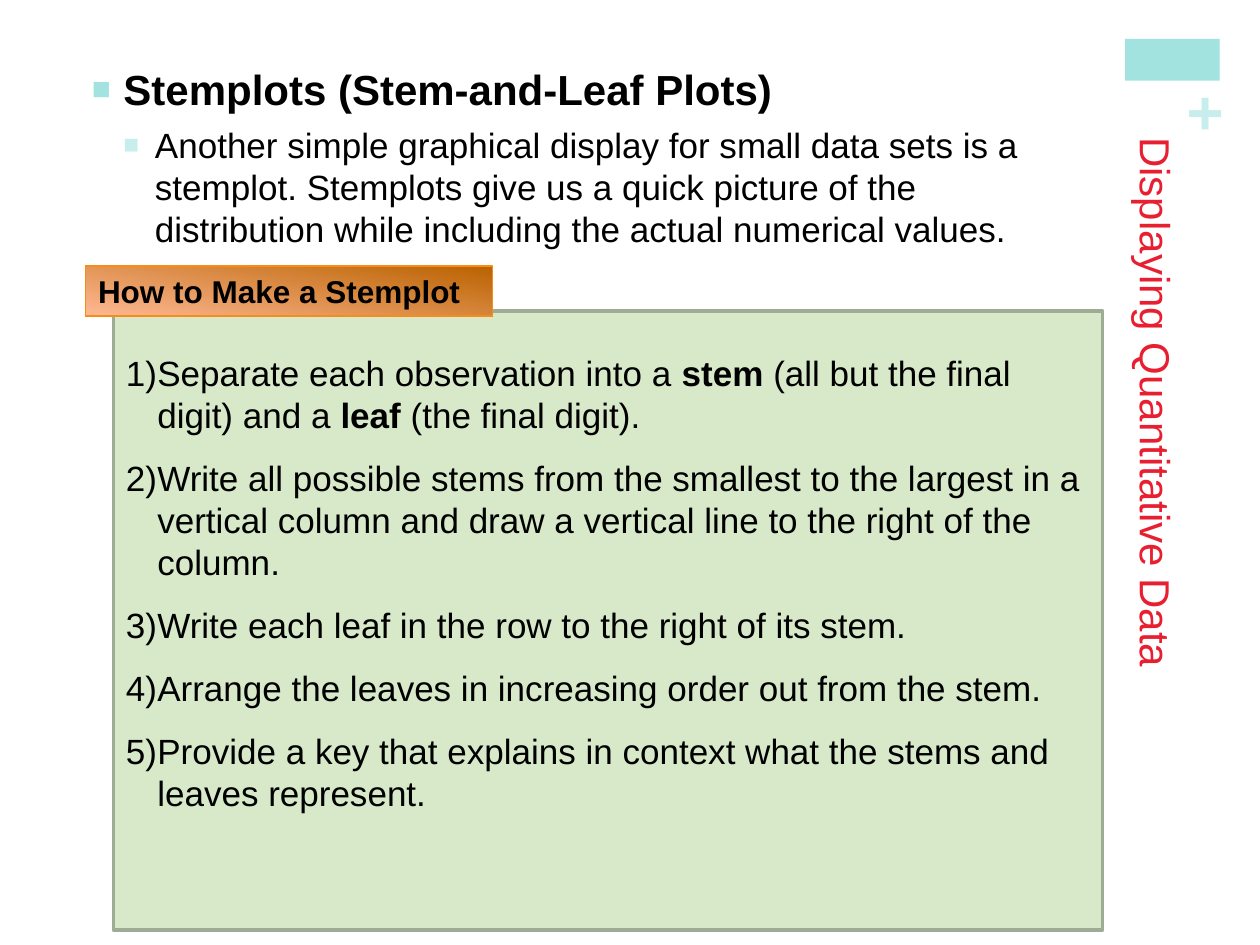
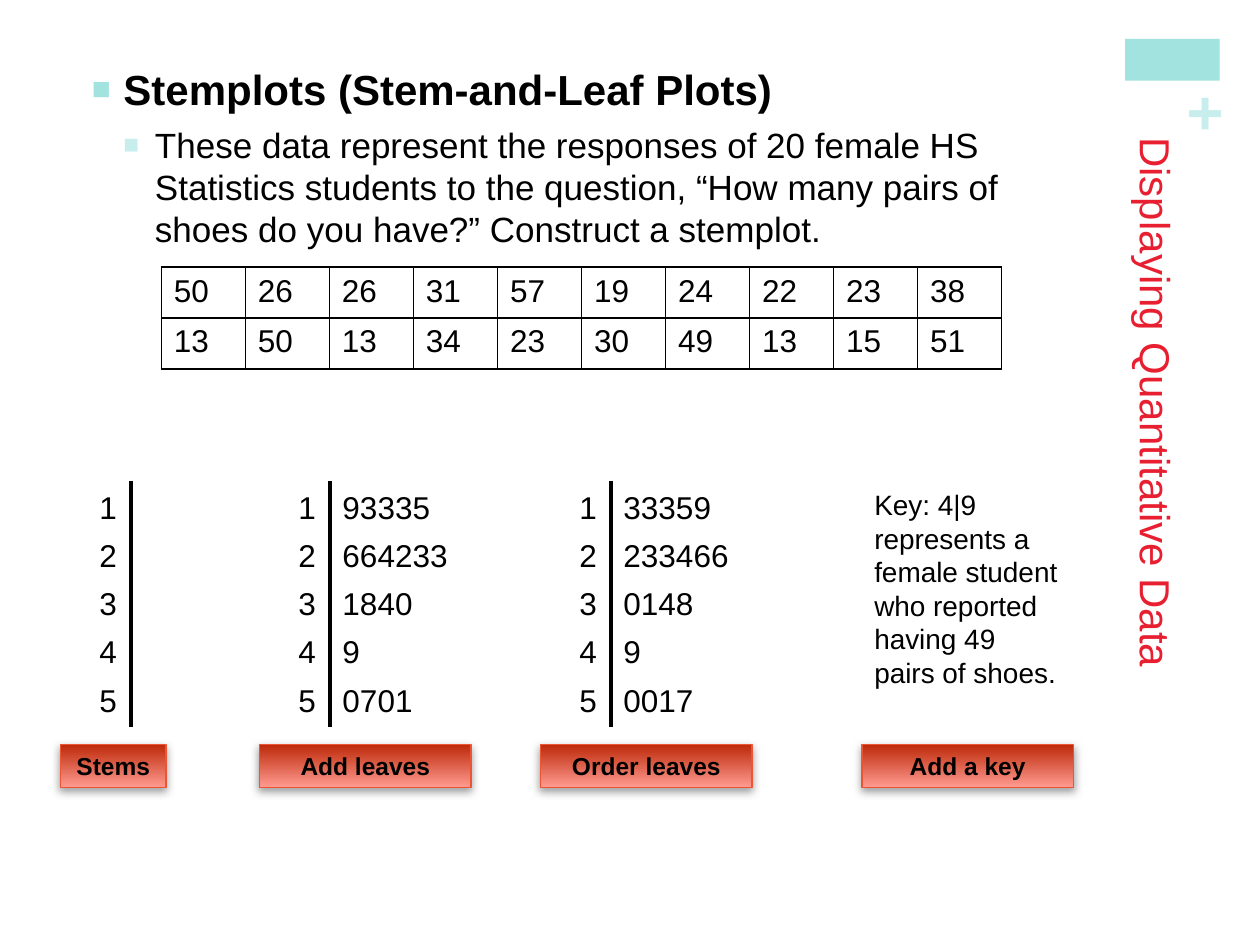
from lxml.etree import SubElement
from pptx import Presentation
from pptx.dml.color import RGBColor
from pptx.enum.shapes import MSO_CONNECTOR, MSO_SHAPE
from pptx.enum.text import MSO_ANCHOR, MSO_AUTO_SIZE, PP_ALIGN
from pptx.oxml.ns import qn
from pptx.util import Inches, Pt

FONT = "Arial"
BLACK = "000000"
TEAL = "A2E3DF"
PALE_TEAL = "C7EEEC"
RED = "E81F30"
ORANGE_FADE = ("BA6200", "FFB993")
RED_FADE = ("BD2909", "FF9A90")

CHAPTER = "Displaying Quantitative Data"
TOPIC = "Stemplots (Stem-and-Leaf Plots)"
INTRO = (
    "Another simple graphical display for small data sets is a stemplot. Stemplots give us "
    "a quick picture of the distribution while including the actual numerical values."
)
QUESTION = (
    "These data represent the responses of 20 female HS Statistics students to the question, "
    "“How many pairs of shoes do you have?” Construct a stemplot."
)
STEPS = [
    "Separate each observation into a *stem* (all but the final digit) and a *leaf* (the final digit).",
    "Write all possible stems from the smallest to the largest in a vertical column "
    "and draw a vertical line to the right of the column.",
    "Write each leaf in the row to the right of its stem.",
    "Arrange the leaves in increasing order out from the stem.",
    "Provide a key that explains in context what the stems and leaves represent.",
]
SHOE_PAIRS = [
    [50, 26, 26, 31, 57, 19, 24, 22, 23, 38],
    [13, 50, 13, 34, 23, 30, 49, 13, 15, 51],
]
ADDED_LEAVES = ["93335", "664233", "1840", "9", "0701"]
ORDERED_LEAVES = ["33359", "233466", "0148", "9", "0017"]
KEY = "Key: 4|9 represents a female student who reported having 49 pairs of shoes."

PLOT_TOP = 3.82
PLOT_HEIGHT = 1.95
LABEL_TOP = 5.91


def rgb(color):
    return RGBColor.from_string(color)


def place(element, left, top, width, height):
    element.left, element.top = Inches(left), Inches(top)
    element.width, element.height = Inches(width), Inches(height)


def format_run(run, size, color, bold):
    run.font.name = FONT
    run.font.size = Pt(size)
    run.font.color.rgb = rgb(color)
    run.font.bold = bold


def write(frame, lines, size, color=BLACK, bold=False, after=0, align=PP_ALIGN.LEFT):
    frame.word_wrap = True
    frame.auto_size = MSO_AUTO_SIZE.NONE
    frame.vertical_anchor = MSO_ANCHOR.TOP
    frame.text = "\n".join(lines)
    for paragraph in frame.paragraphs:
        paragraph.alignment = align
        paragraph.space_before = Pt(0)
        paragraph.space_after = Pt(after)
        pieces = paragraph.text.split("*")
        paragraph.text = pieces[0]
        for piece in pieces[1:]:
            paragraph.add_run().text = piece
        for index, run in enumerate(paragraph.runs):
            format_run(run, size, color, bold or index % 2 == 1)


def hang(paragraph, margin):
    properties = paragraph._p.get_or_add_pPr()
    properties.set("marL", str(Inches(margin)))
    properties.set("indent", str(Inches(-0.25)))
    return properties


def add_square_bullet(paragraph, margin, color):
    properties = hang(paragraph, margin)
    bullet_color = SubElement(properties, qn("a:buClr"))
    SubElement(bullet_color, qn("a:srgbClr"), val=color)
    SubElement(properties, qn("a:buSzPct"), val="75000")
    SubElement(properties, qn("a:buFont"), typeface=FONT)
    SubElement(properties, qn("a:buChar"), char="■")


def add_number(paragraph):
    SubElement(hang(paragraph, 0.25), qn("a:buAutoNum"), type="arabicParenR")


def add_tab_stop(paragraph, position):
    stops = SubElement(paragraph._p.get_or_add_pPr(), qn("a:tabLst"))
    SubElement(stops, qn("a:tab"), pos=str(Inches(position)), algn="l")


def add_box(shapes, left, top, width, height):
    box = shapes.add_shape(
        MSO_SHAPE.RECTANGLE, Inches(left), Inches(top), Inches(width), Inches(height)
    )
    box.shadow.inherit = False
    return box


def add_text(shapes, left, top, width, height, lines, size, **style):
    box = shapes.add_textbox(Inches(left), Inches(top), Inches(width), Inches(height))
    write(box.text_frame, lines, size, **style)
    return box


def outline(box, color, width):
    box.line.color.rgb = rgb(color)
    box.line.width = Pt(width)


def fade(box, colors, angle):
    box.fill.gradient()
    box.fill.gradient_angle = 360 - angle
    for stop, color in zip(box.fill.gradient_stops, colors):
        stop.color.rgb = rgb(color)


def add_drop_shadow(box):
    effects = box._element.spPr.find(qn("a:effectLst"))
    shadow = SubElement(
        effects, qn("a:outerShdw"), blurRad=str(Pt(5)), dist=str(Pt(2)), dir="5400000"
    )
    tone = SubElement(shadow, qn("a:srgbClr"), val="808080")
    SubElement(tone, qn("a:alpha"), val="75000")


def add_topic_slide(deck, explanation):
    slide = deck.slides.add_slide(deck.slide_layouts[1])
    corner = add_box(slide.shapes, 8.93, 0.31, 0.75, 0.33)
    corner.fill.solid()
    corner.fill.fore_color.rgb = rgb(TEAL)
    corner.line.fill.background()

    plus = add_text(slide.shapes, 9.4, 0.61, 0.28, 0.61, ["+"], 36, color=PALE_TEAL, bold=True)
    plus.rotation = 270
    frame = plus.text_frame
    frame.margin_left = frame.margin_right = frame.margin_top = frame.margin_bottom = 0

    title = slide.shapes.title
    place(title, 8.74, 1.04, 0.74, 5.66)
    write(title.text_frame, [CHAPTER], 24, color=RED)
    title.text_frame._txBody.bodyPr.set("vert", "eaVert")

    body = slide.placeholders[1]
    place(body, 0.68, 0.4, 8.07, 2.38)
    frame = body.text_frame
    write(frame, [TOPIC, explanation], 20)
    frame.margin_left = frame.margin_right = Inches(0.05)
    frame.margin_top = frame.margin_bottom = Inches(0.1)
    heading, detail = frame.paragraphs
    format_run(heading.runs[0], 24, BLACK, True)
    detail.level = 1
    detail.space_before = Pt(6)
    add_square_bullet(heading, 0.25, TEAL)
    add_square_bullet(detail, 0.5, PALE_TEAL)
    return slide


def add_steps(slide):
    panel = add_box(slide.shapes, 0.9, 2.47, 7.85, 4.91)
    panel.fill.solid()
    panel.fill.fore_color.rgb = rgb("D7E9C9")
    outline(panel, "9FAC95", 2)
    write(panel.text_frame, STEPS, 20, after=12)
    panel.text_frame.margin_top = Inches(0.32)
    for step in panel.text_frame.paragraphs:
        add_number(step)

    banner = add_box(slide.shapes, 0.68, 2.11, 3.23, 0.4)
    fade(banner, ORANGE_FADE, 100)
    outline(banner, "F78D18", 1)
    write(banner.text_frame, ["How to Make a Stemplot"], 18, bold=True)


def add_cell_borders(cell):
    properties = cell._tc.get_or_add_tcPr()
    for side in ("lnL", "lnR", "lnT", "lnB"):
        border = SubElement(properties, qn(f"a:{side}"), w=str(Pt(1)))
        fill = SubElement(border, qn("a:solidFill"))
        SubElement(fill, qn("a:srgbClr"), val=BLACK)


def add_data_table(slide, rows):
    table = slide.shapes.add_table(
        len(rows), len(rows[0]), Inches(1.28), Inches(2.12), Inches(6.67), Inches(0.81)
    ).table
    table.first_row = table.horz_banding = False
    for row_index, row in enumerate(rows):
        for column_index, pairs in enumerate(row):
            cell = table.cell(row_index, column_index)
            cell.text = str(pairs)
            format_run(cell.text_frame.paragraphs[0].runs[0], 18, BLACK, False)
            add_cell_borders(cell)
            cell.fill.background()


def add_stage_label(shapes, left, width, caption):
    label = add_box(shapes, left, LABEL_TOP, width, 0.34)
    fade(label, RED_FADE, 90)
    outline(label, "EC5534", 1)
    add_drop_shadow(label)
    write(label.text_frame, [caption], 14, bold=True, align=PP_ALIGN.CENTER)


def add_stemplot(slide, left, label_width, plot_width, caption, leaves=None):
    shapes = slide.shapes.add_group_shape().shapes
    add_stage_label(shapes, left, label_width, caption)
    stems = [str(stem) for stem in range(1, 6)]
    lines = [f"{stem}\t{leaf}" for stem, leaf in zip(stems, leaves)] if leaves else stems
    plot = add_text(shapes, left + 0.21, PLOT_TOP, plot_width, PLOT_HEIGHT, lines, 18, after=6)
    if leaves:
        for paragraph in plot.text_frame.paragraphs:
            add_tab_stop(paragraph, 0.35)
    divider_x = Inches(left + 0.56)
    divider = shapes.add_connector(
        MSO_CONNECTOR.STRAIGHT, divider_x, Inches(PLOT_TOP),
        divider_x, Inches(PLOT_TOP + PLOT_HEIGHT),
    )
    outline(divider, BLACK, 2)
    SubElement(divider._element.spPr, qn("a:effectLst"))


def add_key(slide):
    shapes = slide.shapes.add_group_shape().shapes
    add_stage_label(shapes, 6.84, 1.68, "Add a key")
    add_text(shapes, 6.84, PLOT_TOP, 1.68, 1.72, [KEY], 16, after=6)


def main():
    deck = Presentation()
    deck.slide_width, deck.slide_height = Inches(10), Inches(7.5)

    add_steps(add_topic_slide(deck, INTRO))

    example = add_topic_slide(deck, QUESTION)
    add_data_table(example, SHOE_PAIRS)
    add_stemplot(example, 0.48, 0.84, 0.34, "Stems")
    add_stemplot(example, 2.06, 1.68, 1.47, "Add leaves", ADDED_LEAVES)
    add_stemplot(example, 4.29, 1.68, 1.47, "Order leaves", ORDERED_LEAVES)
    add_key(example)

    deck.save("out.pptx")


if __name__ == "__main__":
    main()
